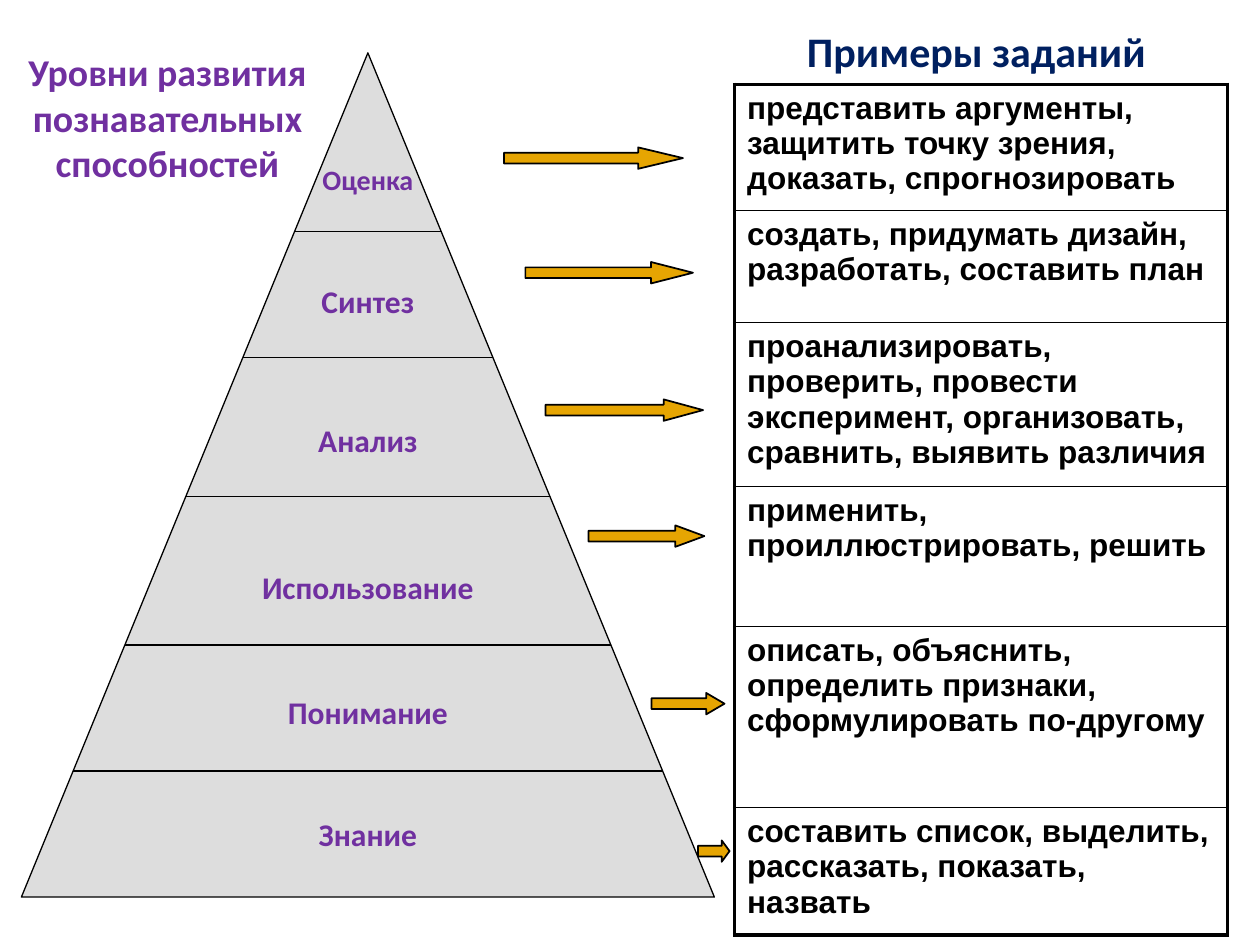
from lxml import etree
from pptx import Presentation
from pptx import util as u
from pptx.dml.color import RGBColor
from pptx.enum import shapes, text
from pptx.oxml.ns import qn

BLACK = RGBColor(0, 0, 0)
GREY = RGBColor(0xDD, 0xDD, 0xDD)
GOLD = RGBColor(0xE6, 0xA5, 0x02)
PURPLE = RGBColor(0x70, 0x30, 0xA0)
NAVY = RGBColor(0x00, 0x20, 0x60)

deck = Presentation()
deck.slide_width, deck.slide_height = u.Inches(10), u.Inches(7.5)
slide = deck.slides.add_slide(deck.slide_layouts[6])


def style(para, words, size, color, font="Calibri", align=text.PP_ALIGN.CENTER):
    para.text = words
    para.alignment = align
    para.font.name, para.font.size, para.font.bold = font, u.Pt(size), True
    para.font.color.rgb = color


def label(home, words, left, top, width, height, size, color):
    box = home.add_textbox(*map(u.Inches, (left, top, width, height)))
    box.text_frame.word_wrap = True
    style(box.text_frame.paragraphs[0], words, size, color)
    return box


left, top, width, height = 0.17, 0.42, 5.5, 6.7
mid = left + width / 2
group = slide.shapes.add_group_shape().shapes
cone = group.add_shape(shapes.MSO_SHAPE.ISOSCELES_TRIANGLE,
                       *map(u.Inches, (left, top, width, height)))
cone.shadow.inherit = False
cone.fill.solid()
cone.fill.fore_color.rgb = GREY
cone.line.color.rgb = BLACK
cone.line.width = u.Pt(0.75)

for y in (1.84, 2.84, 3.94, 5.12, 6.12):
    half = (y - top) / height * width / 2
    line = group.add_connector(shapes.MSO_CONNECTOR.STRAIGHT,
                               *map(u.Inches, (mid - half, y, mid + half, y)))
    line.line.color.rgb = BLACK
    line.line.width = u.Pt(0.75)
    etree.SubElement(line._element.spPr, qn("a:effectLst"))

levels = [
    ("Оценка", 1.24, 1.83, 16),
    ("Синтез", 2.19, 2.36, 18),
    ("Анализ", 3.29, 2.88, 18),
    ("Использование", 4.46, 3.4, 18),
    ("Понимание", 5.45, 3.93, 18),
    ("Знание", 6.42, 3.93, 18),
]
for name, y, wide, size in levels:
    label(group, name, mid - wide / 2, y, wide, 0.83, size, PURPLE)

tasks = [
    ("представить аргументы, защитить точку зрения, доказать, спрогнозировать", 1),
    ("создать, придумать дизайн, разработать, составить план", 0.89),
    ("проанализировать, проверить, провести эксперимент, организовать, "
     "сравнить, выявить различия", 1.3),
    ("применить, проиллюстрировать, решить", 1.11),
    ("описать, объяснить, определить признаки, сформулировать по-другому", 1.44),
    ("составить список, выделить, рассказать, показать, назвать", 1.01),
]
last = len(tasks) - 1
table = slide.shapes.add_table(len(tasks), 1, u.Inches(5.83), u.Inches(0.67),
                               u.Inches(3.91), u.Inches(6.74)).table
table.first_row = table.horz_banding = False
for i, (words, tall) in enumerate(tasks):
    table.rows[i].height = u.Inches(tall)
    cell = table.cell(i, 0)
    style(cell.text_frame.paragraphs[0], words, 18, BLACK, "Arial", text.PP_ALIGN.LEFT)
    props = cell._tc.get_or_add_tcPr()
    edges = {"L": 2.25, "R": 2.25, "T": 2.25 if i == 0 else 1, "B": 2.25 if i == last else 1}
    for side, weight in edges.items():
        edge = etree.SubElement(props, qn("a:ln" + side), w=str(u.Pt(weight)))
        fill = etree.SubElement(edge, qn("a:solidFill"))
        etree.SubElement(fill, qn("a:srgbClr"), val=str(BLACK))
    cell.fill.background()

thick = 0.17
arrows = [(4, 1.17, 1.42), (4.17, 2.08, 1.33), (4.33, 3.17, 1.25),
          (4.67, 4.17, 0.92), (5.17, 5.5, 0.58), (5.54, 6.67, 0.25)]
for x, y, long in arrows:
    arrow = slide.shapes.add_shape(shapes.MSO_SHAPE.RIGHT_ARROW,
                                   *map(u.Inches, (x, y, long, thick)))
    arrow.adjustments[1] = long / thick / 4
    arrow.shadow.inherit = False
    arrow.fill.solid()
    arrow.fill.fore_color.rgb = GOLD
    arrow.line.color.rgb = BLACK
    arrow.line.width = u.Pt(1)

label(slide.shapes, "Примеры заданий", 5.75, 0.15, 4, 0.5, 24, NAVY)
title = label(slide.shapes, "Уровни развития познавательных способностей",
              0, 0.3, 2.66, 1.26, 21.6, PURPLE)
title.text_frame.vertical_anchor = text.MSO_ANCHOR.MIDDLE

deck.save("out.pptx")
